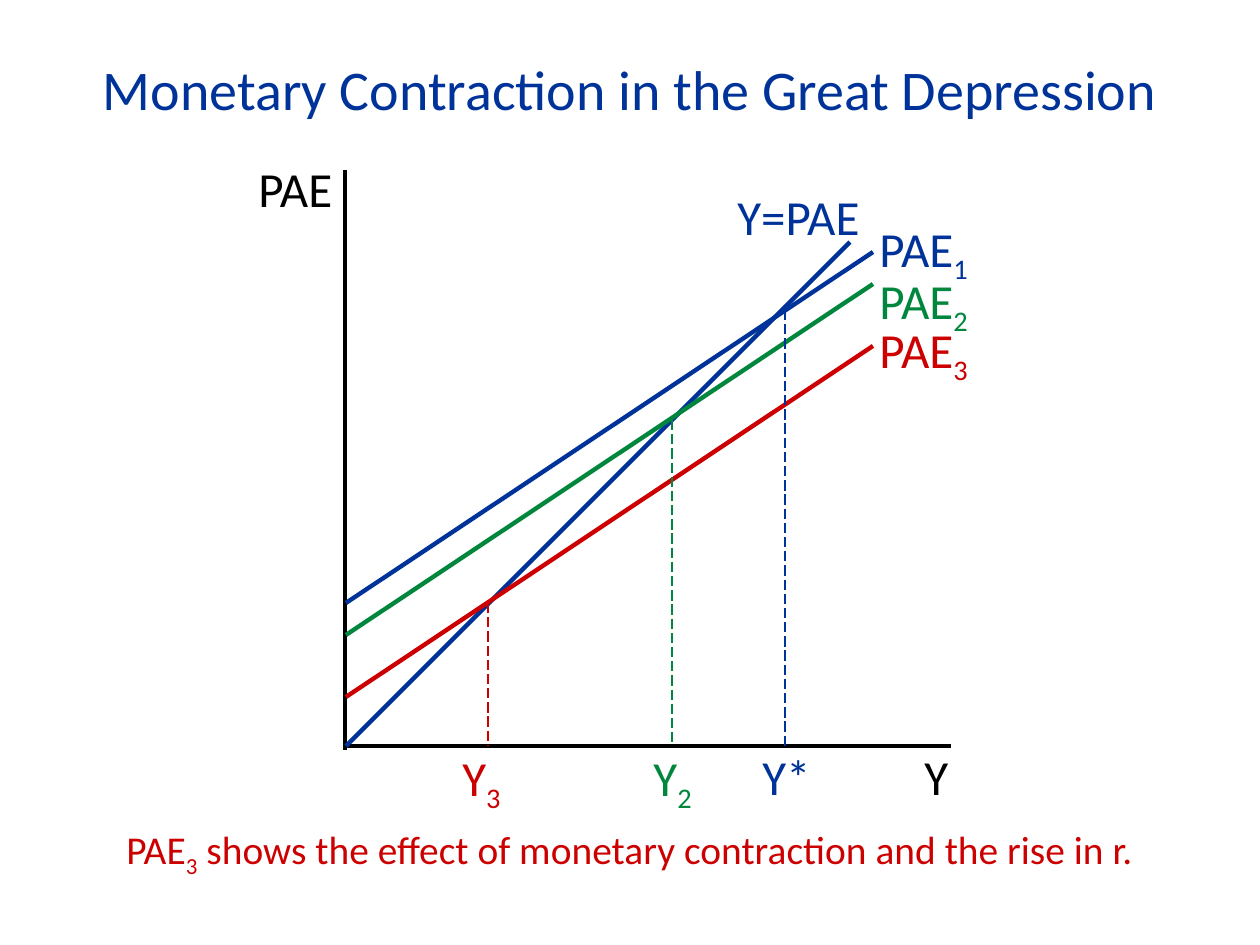
"""Build the slide on monetary contraction in the Great Depression."""
from pptx import Presentation
from pptx.dml.color import RGBColor
from pptx.enum.dml import MSO_LINE
from pptx.enum.shapes import MSO_CONNECTOR
from pptx.enum.text import MSO_ANCHOR, PP_ALIGN
from pptx.oxml.ns import qn
from pptx.util import Pt
from lxml.etree import SubElement

PX = 914400 / 126
FONT = "Calibri"
BLACK, BLUE, GREEN, RED = "000000", "003399", "00863D", "CC0000"
ORIGIN_X, AXIS_Y, CURVE_END = 346, 746, 873

TITLE = "Monetary Contraction in the Great Depression"
CAPTION = [("PAE", False), ("3", True),
           (" shows the effect of monetary contraction and the rise in r.", False)]
AXES = [(345, 170, 345, 750), (ORIGIN_X, AXIS_Y, 951, AXIS_Y)]
IDENTITY = (ORIGIN_X, AXIS_Y, 850, 242)
CURVES = [(603, 252, BLUE), (635, 284, GREEN), (697, 346, RED)]
EQUILIBRIA = [(785, 310, BLUE), (672, 420, GREEN), (488, 603, RED)]
LABELS = [
    ("PAE", "", 246, 164, 103, 62, BLACK),
    ("Y=PAE", "", 725, 180, 157, 72, BLUE),
    ("PAE", "1", 867, 212, 121, 72, BLUE),
    ("PAE", "2", 867, 264, 121, 72, GREEN),
    ("PAE", "3", 867, 313, 132, 72, RED),
    ("Y", "3", 450, 741, 83, 72, RED),
    ("Y", "2", 641, 741, 83, 72, GREEN),
    ("Y*", "", 750, 740, 83, 72, BLUE),
    ("Y", "", 912, 740, 62, 72, BLACK),
]


def px(value):
    return round(value * PX)


def color(code):
    return RGBColor.from_string(code)


def add_line(page, ends, code, width=2.5, dashed=False):
    line = page.shapes.add_connector(MSO_CONNECTOR.STRAIGHT, *map(px, ends))
    line.line.color.rgb = color(code)
    line.line.width = Pt(width)
    if dashed:
        line.line.dash_style = MSO_LINE.LONG_DASH
    SubElement(line._element.spPr, qn("a:effectLst"))


def write(para, spans, size, code):
    for text, lowered in spans:
        span = para.add_run()
        span.text = text
        span.font.name = FONT
        span.font.size = Pt(size)
        span.font.color.rgb = color(code)
        if lowered:
            span._r.get_or_add_rPr().set("baseline", "-25000")


def add_text(page, spans, area, size, code, align=PP_ALIGN.LEFT):
    box = page.shapes.add_textbox(*map(px, area))
    box.text_frame.word_wrap = True
    para = box.text_frame.paragraphs[0]
    para.alignment = align
    write(para, spans, size, code)
    return para


def add_title(page):
    title = page.shapes.title
    title.left, title.top, title.width, title.height = map(px, (88, 48, 1084, 81))
    title.text_frame.word_wrap = False
    title.text_frame.vertical_anchor = MSO_ANCHOR.MIDDLE
    para = title.text_frame.paragraphs[0]
    para.alignment = PP_ALIGN.CENTER
    write(para, [(TITLE, False)], 32, BLUE)


def main():
    deck = Presentation()
    deck.slide_width, deck.slide_height = px(1260), px(945)
    page = deck.slides.add_slide(deck.slide_layouts[5])
    add_title(page)
    for ends in AXES:
        add_line(page, ends, BLACK)
    add_line(page, IDENTITY, BLUE)
    for start, end, code in CURVES:
        add_line(page, (ORIGIN_X, start, CURVE_END, end), code)
    for x, top, code in EQUILIBRIA:
        add_line(page, (x, top, x, AXIS_Y), code, 0.75, True)
    for text, index, *area, code in LABELS:
        spans = [(text, False)] + ([(index, True)] if index else [])
        para = add_text(page, spans, area, 28, code)
        if text == "PAE" and not index:
            para.line_spacing = 0.8
    add_text(page, CAPTION, (88, 819, 1084, 60), 22.5, RED, PP_ALIGN.CENTER)
    deck.save("out.pptx")


if __name__ == "__main__":
    main()
